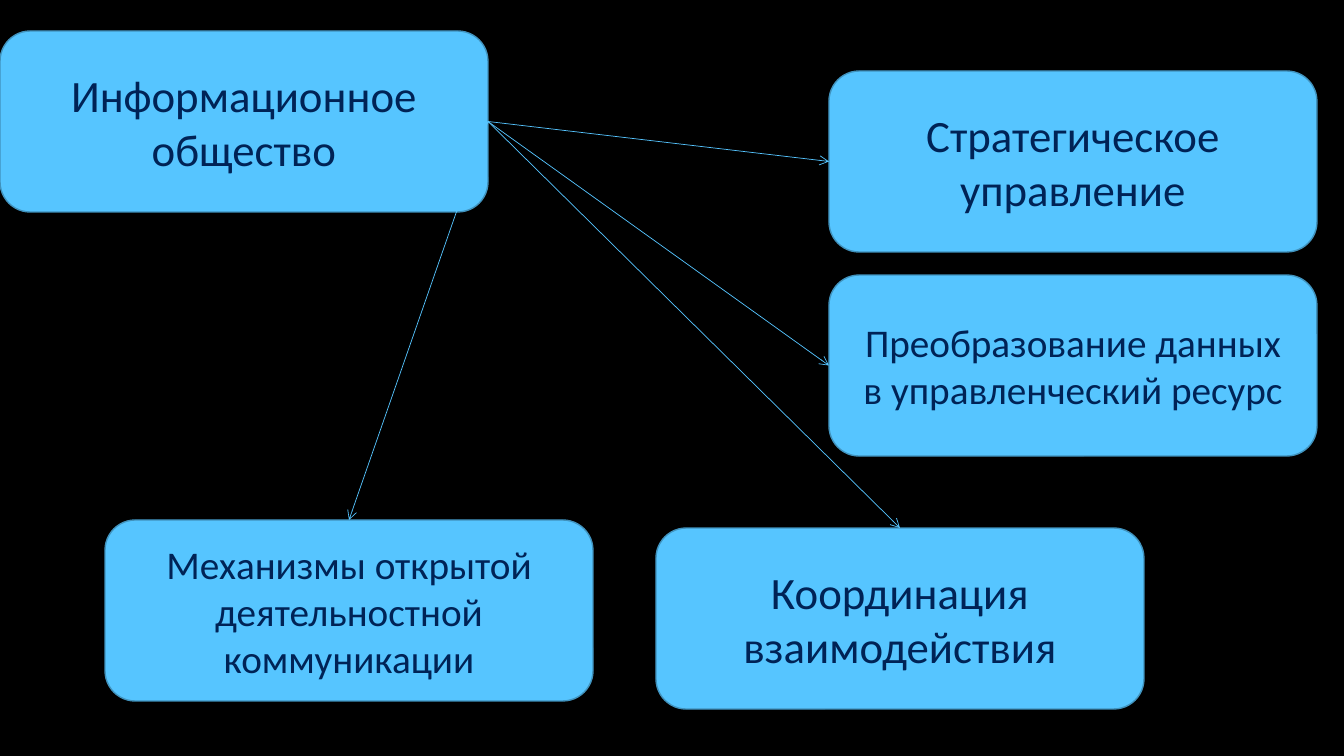
from dataclasses import dataclass

from lxml import etree
from pptx import Presentation
from pptx.dml.color import RGBColor
from pptx.enum.shapes import MSO_CONNECTOR, MSO_SHAPE
from pptx.enum.text import MSO_ANCHOR, PP_ALIGN
from pptx.oxml.ns import qn
from pptx.util import Pt

ROUNDED = MSO_SHAPE.ROUNDED_RECTANGLE
STRAIGHT = MSO_CONNECTOR.STRAIGHT
MIDDLE = MSO_ANCHOR.MIDDLE
CENTER = PP_ALIGN.CENTER
TOP, LEFT, RIGHT = 0, 1, 3
EMU_PER_PX = 914400 / 100.8
SLIDE_WIDTH, SLIDE_HEIGHT = 1344, 756
BOX_WIDTH, BOX_HEIGHT = 488, 181


@dataclass(frozen=True)
class Theme:
    background: str = "000000"
    fill: str = "56C5FF"
    outline: str = "4092BD"
    text: str = "002356"
    font: str = "Calibri"
    large: int = 32
    medium: int = 28
    outline_width: float = 1
    arrow_width: float = 0.5


def px(length):
    return round(length * EMU_PER_PX)


def color(code):
    return RGBColor.from_string(code)


def write_text(frame, text, *, font, size, ink, align):
    para = frame.paragraphs[0]
    para.alignment = align
    for index, line in enumerate(text.split("\n")):
        if index:
            para.add_line_break()
        span = para.add_run()
        span.text = line
        span.font.name = font
        span.font.size = Pt(size)
        span.font.color.rgb = color(ink)


class Diagram:
    def __init__(self, deck, theme):
        self.theme = theme
        self.slide = deck.slides.add_slide(deck.slide_layouts[6])
        backdrop = self.slide.background.fill
        backdrop.solid()
        backdrop.fore_color.rgb = color(theme.background)

    def box(self, text, left, top, size):
        theme = self.theme
        box = self.slide.shapes.add_shape(
            ROUNDED, px(left), px(top), px(BOX_WIDTH), px(BOX_HEIGHT))
        box.shadow.inherit = False
        box.fill.solid()
        box.fill.fore_color.rgb = color(theme.fill)
        box.line.color.rgb = color(theme.outline)
        box.line.width = Pt(theme.outline_width)
        box.text_frame.word_wrap = True
        box.text_frame.vertical_anchor = MIDDLE
        write_text(box.text_frame, text, font=theme.font, size=size,
                   ink=theme.text, align=CENTER)
        return box

    def arrow(self, source, target, target_side):
        arrow = self.slide.shapes.add_connector(STRAIGHT, 0, 0, 0, 0)
        arrow.begin_connect(source, RIGHT)
        arrow.end_connect(target, target_side)
        arrow.line.color.rgb = color(self.theme.fill)
        arrow.line.width = Pt(self.theme.arrow_width)
        etree.SubElement(arrow.line._get_or_add_ln(), qn("a:tailEnd"), type="arrow")
        etree.SubElement(arrow._element.spPr, qn("a:effectLst"))


def main():
    deck = Presentation()
    deck.slide_width = px(SLIDE_WIDTH)
    deck.slide_height = px(SLIDE_HEIGHT)
    theme = Theme()
    diagram = Diagram(deck, theme)

    society = diagram.box("Информационное общество", 0, 31, theme.large)
    goals = [
        ("Механизмы открытой деятельностной коммуникации", 105, 520, theme.medium, TOP),
        ("Координация взаимодействия", 656, 528, theme.large, TOP),
        ("Преобразование данных\nв управленческий ресурс", 829, 275, theme.medium, LEFT),
        ("Стратегическое управление", 829, 71, theme.large, LEFT),
    ]
    targets = [(diagram.box(text, left, top, size), side)
               for text, left, top, size, side in goals]
    for target, side in targets:
        diagram.arrow(society, target, side)

    deck.save("out.pptx")


if __name__ == "__main__":
    main()
